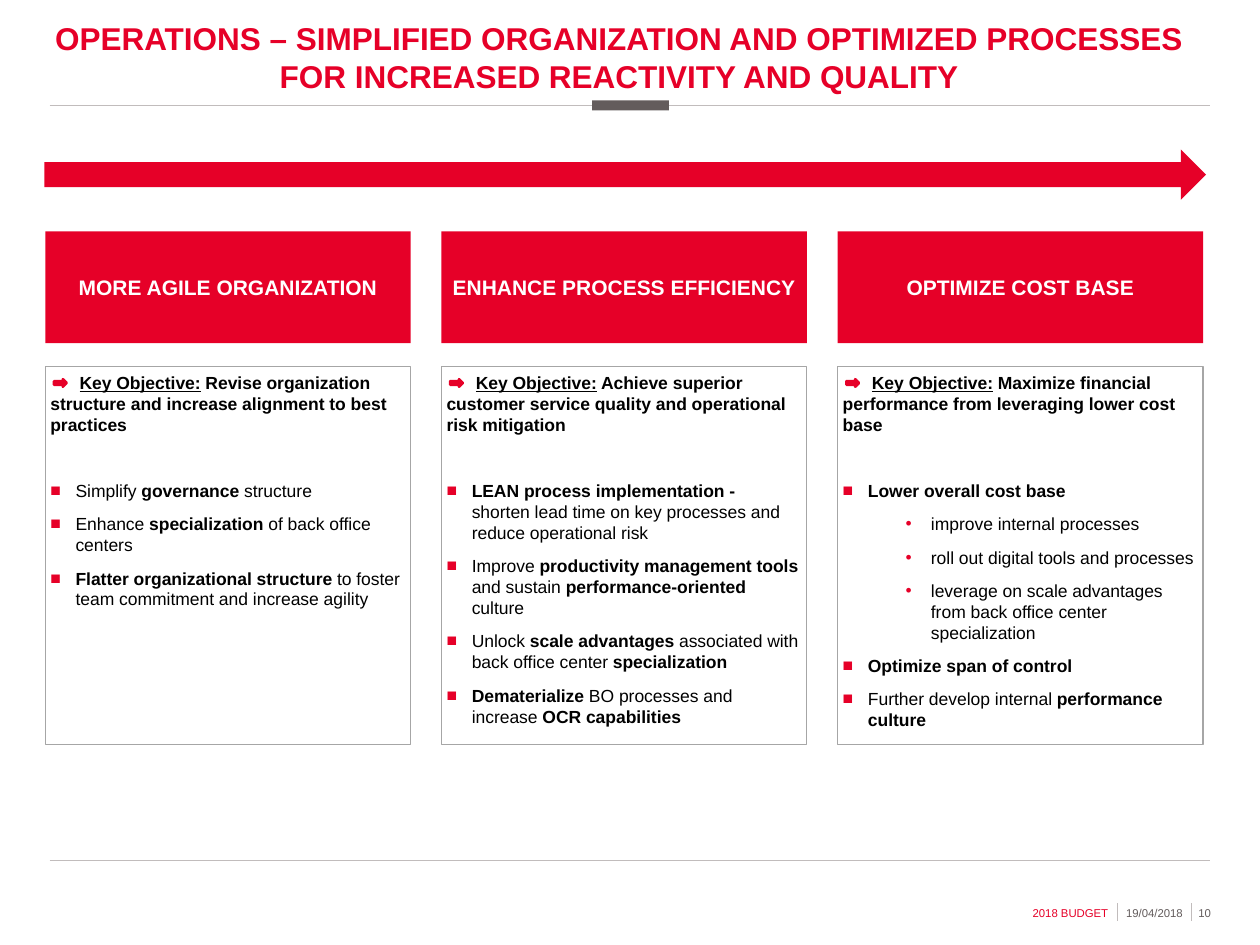
from dataclasses import dataclass

from lxml.etree import SubElement
from pptx import Presentation
from pptx.dml.color import RGBColor
from pptx.enum.shapes import MSO_CONNECTOR, MSO_SHAPE
from pptx.enum.text import MSO_ANCHOR, PP_ALIGN
from pptx.oxml.ns import qn
from pptx.util import Pt


@dataclass(frozen=True)
class Theme:
    font: str = "Arial"
    red: str = "E60028"
    dark: str = "635C5C"
    rule: str = "C1BCBC"
    border: str = "A6A6A6"
    black: str = "000000"
    white: str = "FFFFFF"
    title: float = 18
    header: float = 12
    body: float = 10
    footer: float = 6.5


THEME = Theme()
COL_LEFT, COL_STEP, COL_WIDTH = 25.9, 226.4, 208.8
HEADER_TOP, HEADER_HEIGHT = 132.3, 63.9
BODY_TOP, BODY_HEIGHT = 209.5, 216

COLUMNS = [
    ("MORE AGILE ORGANIZATION",
     "Revise organization structure and increase alignment to best practices",
     [(0, "Simplify *governance* structure"),
      (0, "Enhance *specialization* of back office centers"),
      (0, "*Flatter organizational structure* to foster team commitment "
          "and increase agility")]),
    ("ENHANCE PROCESS EFFICIENCY",
     "Achieve superior customer service quality and operational risk mitigation",
     [(0, "*LEAN process implementation -*\nshorten lead time on key processes "
          "and reduce operational risk"),
      (0, "Improve *productivity management tools* and sustain "
          "*performance-oriented* culture"),
      (0, "Unlock *scale advantages* associated with back office center "
          "*specialization*"),
      (0, "*Dematerialize* BO processes and increase *OCR capabilities*")]),
    ("OPTIMIZE COST BASE",
     "Maximize financial performance from leveraging lower cost base",
     [(0, "*Lower overall cost base*"),
      (1, "improve internal processes"),
      (1, "roll out digital tools and processes"),
      (1, "leverage on scale advantages from back office center specialization"),
      (0, "*Optimize span of control*"),
      (0, "Further develop internal *performance culture*")]),
]


def rgb(value):
    return RGBColor.from_string(value)


def add_run(p, text, size=THEME.body, color=THEME.black, bold=False, underline=False):
    r = p.add_run()
    r.text = text
    r.font.name = THEME.font
    r.font.size = Pt(size)
    r.font.color.rgb = rgb(color)
    r.font.bold = bold
    r.font.underline = underline


def add_marked_runs(p, text):
    for n, line in enumerate(text.split("\n")):
        if n:
            p.add_line_break()
        for i, part in enumerate(line.split("*")):
            if part:
                add_run(p, part, bold=i % 2 == 1)


def set_frame(tf, insets, anchor=MSO_ANCHOR.TOP, wrap=True):
    tf.margin_left, tf.margin_top, tf.margin_right, tf.margin_bottom = map(Pt, insets)
    tf.vertical_anchor = anchor
    tf.word_wrap = wrap


def add_box(s, kind, left, top, width, height, fill=None, line=None, weight=0.75):
    sp = s.shapes.add_shape(kind, Pt(left), Pt(top), Pt(width), Pt(height))
    sp.shadow.inherit = False
    if fill:
        sp.fill.solid()
        sp.fill.fore_color.rgb = rgb(fill)
    else:
        sp.fill.background()
    if line:
        sp.line.color.rgb = rgb(line)
        sp.line.width = Pt(weight)
    else:
        sp.line.fill.background()
    return sp


def add_rule(s, x1, y1, x2, y2):
    c = s.shapes.add_connector(MSO_CONNECTOR.STRAIGHT, Pt(x1), Pt(y1), Pt(x2), Pt(y2))
    c.line.color.rgb = rgb(THEME.rule)
    c.line.width = Pt(0.5)
    SubElement(c._element.spPr, qn("a:effectLst"))


def add_label(s, text, left, top, width, height, insets, align=PP_ALIGN.RIGHT,
              anchor=MSO_ANCHOR.TOP, wrap=False, **fmt):
    sp = s.shapes.add_textbox(Pt(left), Pt(top), Pt(width), Pt(height))
    set_frame(sp.text_frame, insets, anchor, wrap)
    p = sp.text_frame.paragraphs[0]
    p.alignment = align
    add_run(p, text, **fmt)


def set_bullet(p, level):
    pPr = p._p.get_or_add_pPr()
    pPr.set("marL", str(Pt(50.4 if level else 14.4)))
    pPr.set("indent", str(-Pt(14.4)))
    SubElement(SubElement(pPr, qn("a:buClr")), qn("a:srgbClr")).set("val", THEME.red)
    SubElement(pPr, qn("a:buFont")).set("typeface", THEME.font)
    SubElement(pPr, qn("a:buChar")).set("char", "•" if level else "■")
    p.level = level


def set_spacing(p, before=3, after=4):
    p.alignment = PP_ALIGN.LEFT
    p.line_spacing = Pt(12)
    p.space_before = Pt(before)
    p.space_after = Pt(after)


def add_column(s, left, header, objective, bullets):
    sp = add_box(s, MSO_SHAPE.RECTANGLE, left, HEADER_TOP, COL_WIDTH, HEADER_HEIGHT,
                 fill=THEME.red)
    set_frame(sp.text_frame, (4.3, 3.6, 4.3, 3.6), MSO_ANCHOR.MIDDLE)
    p = sp.text_frame.paragraphs[0]
    p.alignment = PP_ALIGN.CENTER
    add_run(p, header, size=THEME.header, color=THEME.white, bold=True)

    sp = add_box(s, MSO_SHAPE.RECTANGLE, left, BODY_TOP, COL_WIDTH, BODY_HEIGHT,
                 line=THEME.border)
    tf = sp.text_frame
    set_frame(tf, (2.9, 2.9, 2.9, 2.9))
    p = tf.paragraphs[0]
    p._p.get_or_add_pPr().set("indent", str(Pt(16.7)))
    set_spacing(p, before=0, after=23)
    add_run(p, "Key Objective:", bold=True, underline=True)
    add_run(p, " " + objective, bold=True)
    for level, text in bullets:
        p = tf.add_paragraph()
        set_bullet(p, level)
        set_spacing(p)
        add_marked_runs(p, text)

    add_box(s, MSO_SHAPE.RIGHT_ARROW, left + 5, BODY_TOP + 7.2, 7.2, 4.3,
            fill=THEME.red, line=THEME.red, weight=1.5)


def add_frame(s):
    for y in (60.3, 491.6):
        add_rule(s, 28.4, y, 691.6, y)
    add_box(s, MSO_SHAPE.RECTANGLE, 338.3, 57.4, 43.9, 5.7, fill=THEME.dark)
    add_label(s, "OPERATIONS – SIMPLIFIED ORGANIZATION AND OPTIMIZED PROCESSES "
              "FOR INCREASED REACTIVITY AND QUALITY", 25.2, 10.4, 663.1, 43.9,
              (0, 0, 5.8, 0), align=PP_ALIGN.CENTER, anchor=MSO_ANCHOR.MIDDLE,
              wrap=True, size=THEME.title, color=THEME.red, bold=True)


def add_footer(s):
    inset = (2.9, 2.9, 2.9, 2.9)
    add_label(s, "2018 BUDGET", 587.2, 514.8, 49, 13, inset,
              size=THEME.footer, color=THEME.red)
    add_label(s, "19/04/2018", 640.6, 514.8, 38.2, 13, inset,
              size=THEME.footer, color=THEME.dark)
    add_label(s, "10", 682.6, 515.4, 9.4, 13, (0, 2.9, 0, 2.9),
              anchor=MSO_ANCHOR.MIDDLE, size=THEME.footer, color=THEME.dark)
    for x in (638.6, 680.9):
        add_rule(s, x, 516.2, x, 526.3)


def main():
    prs = Presentation()
    prs.slide_width, prs.slide_height = Pt(720), Pt(540)
    s = prs.slides.add_slide(prs.slide_layouts[6])
    add_frame(s)
    add_box(s, MSO_SHAPE.RIGHT_ARROW, 25.4, 85.4, 663.8, 28.8, fill=THEME.red)
    for i, column in enumerate(COLUMNS):
        add_column(s, COL_LEFT + i * COL_STEP, *column)
    add_footer(s)
    prs.save("out.pptx")


if __name__ == "__main__":
    main()
